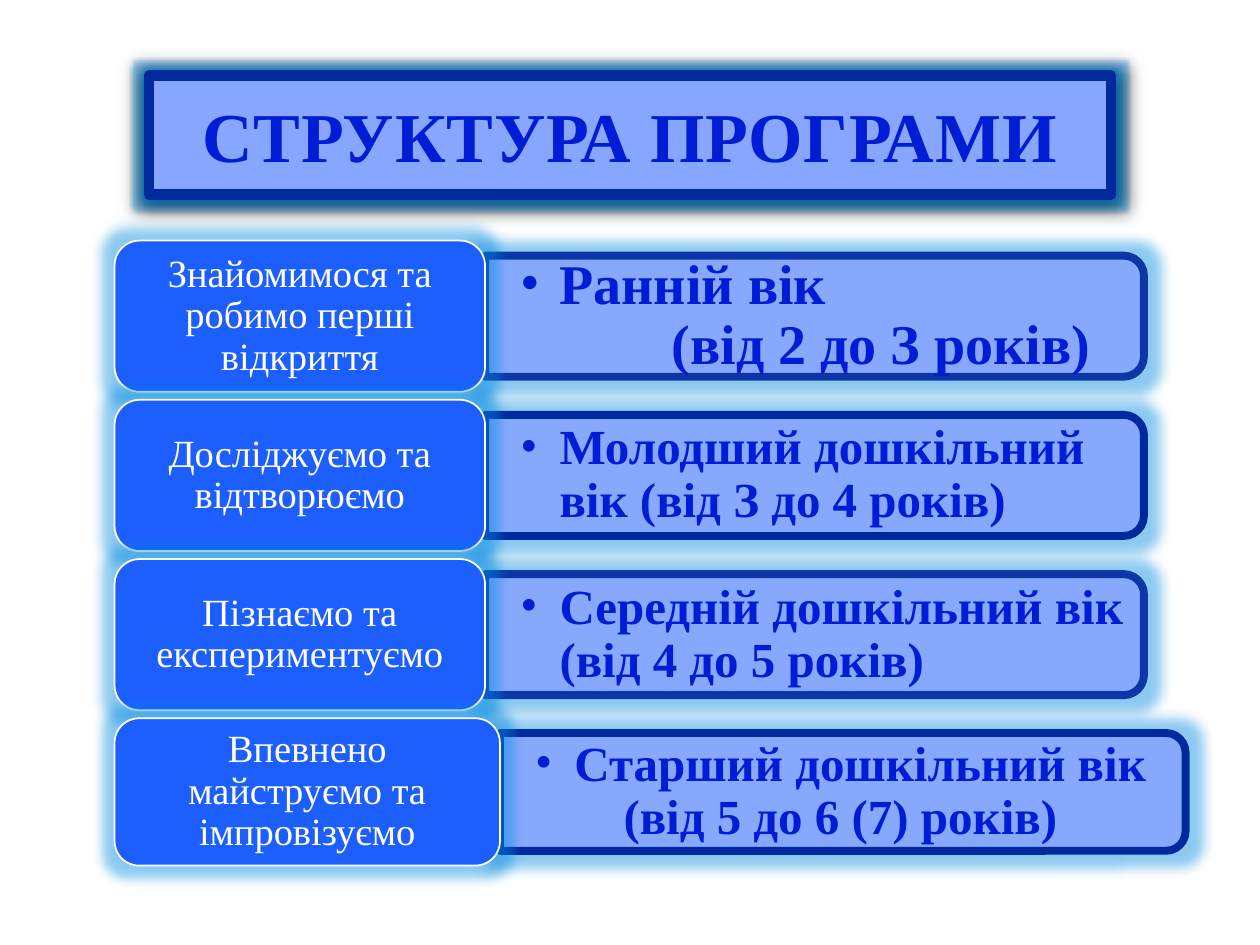
from dataclasses import dataclass
from lxml.etree import SubElement
from pptx import Presentation
from pptx.dml.color import RGBColor
from pptx.enum.shapes import MSO_SHAPE
from pptx.enum.text import MSO_ANCHOR, PP_ALIGN
from pptx.oxml.ns import qn
from pptx.util import Cm, Pt


@dataclass(frozen=True)
class Theme:
    face: str = "Times New Roman"
    pale: str = "87A6FF"
    navy: str = "00299E"
    ink: str = "001CD5"
    blue: str = "1D5EFF"
    white: str = "FFFFFF"
    black: str = "000000"
    halo: str = "0089E0"
    title: int = 40
    large: int = 32
    body: int = 28
    label: int = 22


THEME = Theme()
# label, label width, label height, bar length, text size, [(line, indent)], tab stop, line alpha
ROWS = [
    ("Знайомимося та робимо перші відкриття", 7.47, 3.05, 13.28, THEME.large,
     [("Ранній вік", 0.79), ("(від 2 до З років)", 3.05)], None, 90),
    ("Досліджуємо та відтворюємо", 7.47, 3.05, 13.28, THEME.body,
     [("Молодший дошкільний вік (від З до 4 років)", 0.79)], None, 100),
    ("Пізнаємо та експериментуємо", 7.47, 3.05, 13.28, THEME.body,
     [("Середній дошкільний вік\t(від 4 до 5 років)", 0.79)], 2.92, 90),
    ("Впевнено майструємо та імпровізуємо", 7.77, 2.97, 13.82, THEME.body,
     [("Старший дошкільний вік", 0.79), ("(від 5 до 6 (7) років)", 1.78)], None, 100),
]


def tint(node, color, alpha=100):
    clr = SubElement(node, qn("a:srgbClr"), val=color)
    if alpha < 100:
        SubElement(clr, qn("a:alpha"), val=str(alpha * 1000))


def fade(node, alpha):
    """Make the first colour found under the node see-through."""
    clr = next(node.iter(qn("a:srgbClr")))
    SubElement(clr, qn("a:alpha"), val=str(alpha * 1000))


def cast(node, blur, dist, angle, color, alpha=100):
    shade = SubElement(node, qn("a:outerShdw"), blurRad=str(Pt(blur)), dist=str(Pt(dist)),
                       dir=str(angle * 60000), algn="tl", rotWithShape="0")
    tint(shade, color, alpha)


def draw(slide, kind, box, fill, line, width, glow, alpha):
    shape = slide.shapes.add_shape(kind, *map(Cm, box))
    shape.shadow.inherit = False
    shape.fill.solid()
    shape.fill.fore_color.rgb = RGBColor.from_string(fill)
    shape.line.color.rgb = RGBColor.from_string(line)
    shape.line.width = Pt(width)
    effects = shape._element.spPr.find(qn("a:effectLst"))
    tint(SubElement(effects, qn("a:glow"), rad=str(Pt(glow))), THEME.halo, alpha)
    return shape, effects


def frame(shape, left, right, top):
    text = shape.text_frame
    form = dict(word_wrap=True, vertical_anchor=MSO_ANCHOR.MIDDLE, margin_left=Cm(left),
                margin_right=Cm(right), margin_top=Cm(top), margin_bottom=Cm(top))
    for name, value in form.items():
        setattr(text, name, value)
    return text


def write(para, words, size, color, bold, align, space=1.0):
    para.alignment, para.line_spacing = align, space
    run = para.add_run()
    run.text = words
    for name, value in dict(name=THEME.face, size=Pt(size), bold=bold).items():
        setattr(run.font, name, value)
    run.font.color.rgb = RGBColor.from_string(color)
    return run


def add_title(slide, box):
    shape, effects = draw(slide, MSO_SHAPE.RECTANGLE, box, THEME.pale, THEME.navy, 6, 4, 40)
    cast(effects, 8.5, 1, 90, THEME.black)
    para = frame(shape, 0.25, 0.25, 0.13).paragraphs[0]
    run = write(para, "СТРУКТУРА ПРОГРАМИ", THEME.title, THEME.ink, True, PP_ALIGN.CENTER)
    props = run.font._element
    props.set("spc", "50")
    edge = SubElement(props, qn("a:ln"), w=str(Pt(0.75)))
    tint(SubElement(edge, qn("a:solidFill")), THEME.blue)
    props.insert(0, edge)
    glyphs = SubElement(props, qn("a:effectLst"))
    cast(glyphs, 3, 3, 45, THEME.black, 40)
    props.insert(2, glyphs)


def add_bar(slide, box, alpha):
    """Draw a bar rounded on its right, as a turned upright shape."""
    left, top, width, height = box
    shift = (width - height) / 2
    bar, _ = draw(slide, MSO_SHAPE.ROUND_2_SAME_RECTANGLE,
                  (left + shift, top - shift, height, width),
                  THEME.pale, THEME.navy, 4.5, 14, 45)
    bar.rotation = 90
    fade(bar._element.spPr.find(qn("a:solidFill")), 90)
    if alpha < 100:
        fade(bar.line._ln, alpha)


def add_ages(slide, box, size, lines, stop):
    text = frame(slide.shapes.add_textbox(*map(Cm, box)), 0.69, 0.3, 0.36)
    for i, (words, indent) in enumerate(lines):
        para = text.paragraphs[0] if i == 0 else text.add_paragraph()
        props = para._p.get_or_add_pPr()
        props.set("marL", str(Cm(indent)))
        props.set("indent", str(0 if i else -Cm(indent)))
        if i == 0:
            SubElement(props, qn("a:buFont"), typeface=THEME.face)
            SubElement(props, qn("a:buChar"), char="•")
        if stop:
            tabs = SubElement(props, qn("a:tabLst"))
            SubElement(tabs, qn("a:tab"), pos=str(Cm(stop)), algn="l")
        write(para, words, size, THEME.ink, True, PP_ALIGN.LEFT, 0.9)


def add_row(slide, left, top, row):
    label, width, height, length, size, lines, stop, alpha = row
    start, depth = left + width, height * 0.8
    edge = top + height * 0.1
    add_bar(slide, (start, edge, length, depth), alpha)
    add_ages(slide, (start + 0.02, edge + 0.12, length - 0.13, depth - 0.24), size, lines, stop)
    card, _ = draw(slide, MSO_SHAPE.ROUNDED_RECTANGLE, (left, top, width, height),
                   THEME.blue, THEME.white, 1, 14, 45)
    write(frame(card, 0.38, 0.38, 0.28).paragraphs[0], label, THEME.label, THEME.white,
          False, PP_ALIGN.CENTER, 0.9)


def main():
    deck = Presentation()
    deck.slide_width, deck.slide_height = Cm(25.4), Cm(19.05)
    slide = deck.slides.add_slide(deck.slide_layouts[6])
    add_title(slide, (3, 1.52, 19.4, 2.4))
    for i, row in enumerate(ROWS):
        add_row(slide, 2.31, 4.85 + i * 3.21, row)
    deck.save("out.pptx")


if __name__ == "__main__":
    main()
